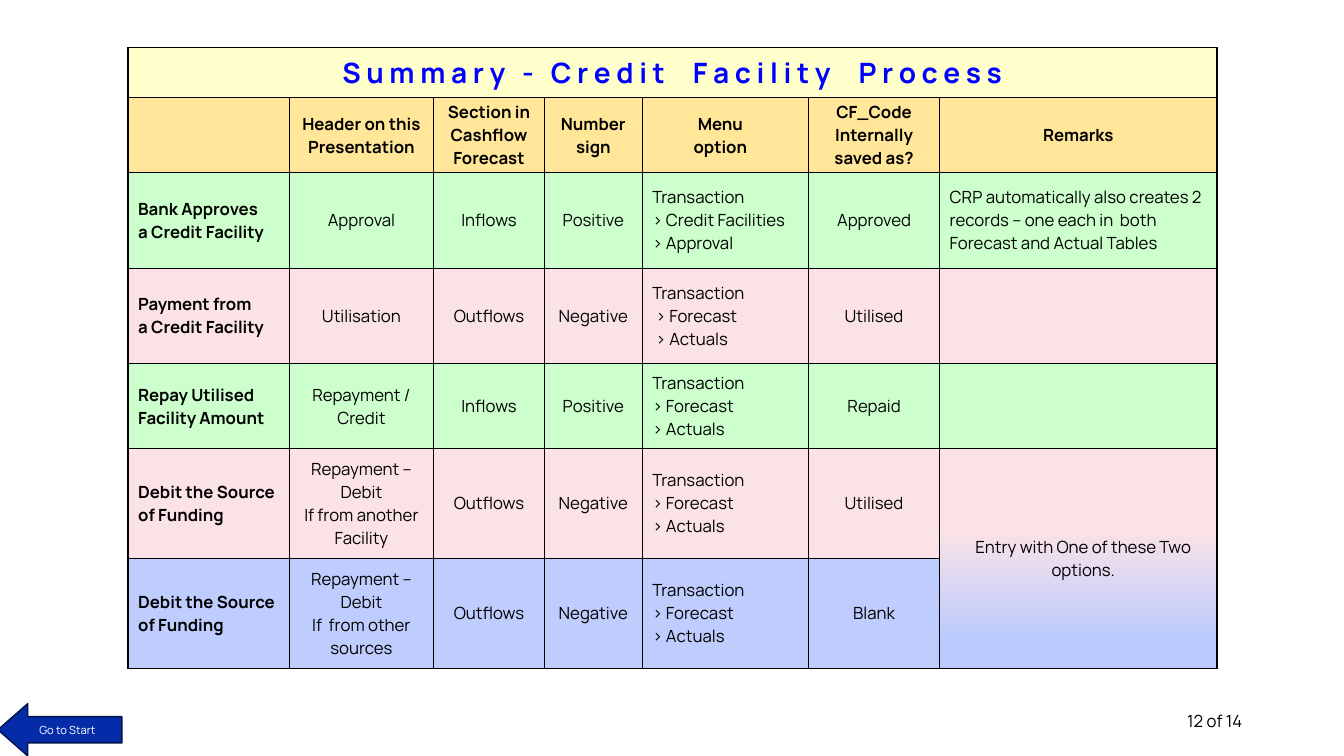
from dataclasses import dataclass

from lxml.etree import SubElement
from pptx import Presentation
from pptx.dml.color import RGBColor
from pptx.enum.shapes import MSO_SHAPE
from pptx.enum.text import MSO_ANCHOR, PP_ALIGN
from pptx.oxml.ns import qn
from pptx.slide import Slide
from pptx.table import _Cell
from pptx.text.text import TextFrame
from pptx.util import Emu, Pt

PX = 9144


@dataclass(frozen=True)
class Theme:
    font: str = "Manrope"
    title_size: int = 20
    body_size: int = 12
    button_size: int = 8
    ink: str = "000000"
    title_ink: str = "0000FF"
    title_fill: str = "FFFFCC"
    header_fill: str = "FFE699"
    green: str = "CCFFCC"
    pink: str = "FAE2E6"
    blue: str = "BECDFE"
    blend_end: str = "BACAFE"
    button_fill: str = "042CA9"
    button_line: str = "02134A"
    button_ink: str = "FFFFFF"


@dataclass(frozen=True)
class Box:
    left: int
    top: int
    width: int
    height: int

    def emu(self) -> list[Emu]:
        return [px(side) for side in (self.left, self.top, self.width, self.height)]


@dataclass(frozen=True)
class Style:
    color: str
    size: int
    bold: bool = False
    align: PP_ALIGN = PP_ALIGN.CENTER


@dataclass(frozen=True)
class Step:
    fill: str
    height: int
    texts: tuple[str, ...]


THEME = Theme()
PAGE = Box(0, 0, 1333, 750)
TABLE = Box(127, 47, 1080, 616)
BUTTON = Box(-2, 698, 123, 52)
PAGE_NUMBER = Box(942, 695, 300, 40)
COLUMN_WIDTHS = (160, 143, 110, 97, 165, 130, 275)
TITLE_HEIGHT = 50
STEP_COLUMN, MENU_COLUMN, REMARKS_COLUMN = 0, 4, 6
LEFT_COLUMNS = (STEP_COLUMN, MENU_COLUMN, REMARKS_COLUMN)
INDENT = 10
TITLE = " ".join("Summary - Credit  Facility  Process")
MENU = "Transaction\n> Forecast\n> Actuals"

HEADER = Step(THEME.header_fill, 74, (
    "", "Header on this Presentation", "Section in Cashflow\nForecast", "Number\nsign",
    "Menu\noption", "CF_Code\nInternally\nsaved as?", "Remarks"))
STEPS = (
    Step(THEME.green, 95, (
        "Bank Approves\na Credit Facility", "Approval", "Inflows", "Positive",
        "Transaction\n> Credit Facilities\n> Approval", "Approved",
        "CRP automatically also creates 2 records – one each in  both Forecast and Actual Tables")),
    Step(THEME.pink, 95, (
        "Payment from\na Credit Facility", "Utilisation", "Outflows", "Negative",
        "Transaction\n > Forecast\n > Actuals", "Utilised", "")),
    Step(THEME.green, 84, (
        "Repay Utilised Facility Amount", "Repayment / Credit", "Inflows", "Positive",
        MENU, "Repaid", "")),
    Step(THEME.pink, 109, (
        "Debit the Source of Funding", "Repayment – Debit\nIf from another Facility",
        "Outflows", "Negative", MENU, "Utilised", "Entry with One of these Two options.")),
    Step(THEME.blue, 109, (
        "Debit the Source of Funding", "Repayment – Debit\nIf  from other sources",
        "Outflows", "Negative", MENU, "Blank", "")),
)


def px(length: int) -> Emu:
    return Emu(length * PX)


def rgb(color: str) -> RGBColor:
    return RGBColor.from_string(color)


def write(frame: TextFrame, text: str, style: Style) -> None:
    frame.text = text
    formats = {"name": THEME.font, "size": Pt(style.size), "bold": style.bold}
    for para in frame.paragraphs:
        para.alignment = style.align
        for span in para.runs:
            for name, value in formats.items():
                setattr(span.font, name, value)
            span.font.color.rgb = rgb(style.color)


def add_borders(cell: _Cell) -> None:
    properties = cell._tc.get_or_add_tcPr()
    for side in ("a:lnL", "a:lnR", "a:lnT", "a:lnB"):
        line = SubElement(properties, qn(side), w=str(Pt(1)))
        SubElement(SubElement(line, qn("a:solidFill")), qn("a:srgbClr"), val=THEME.ink)


def fill_cell(cell: _Cell, text: str, fill: str, style: Style, left: int = 0, right: int = 0) -> None:
    formats = {
        "margin_left": px(left), "margin_right": px(right), "margin_top": 0,
        "margin_bottom": 0, "vertical_anchor": MSO_ANCHOR.MIDDLE,
    }
    for name, value in formats.items():
        setattr(cell, name, value)
    add_borders(cell)
    cell.fill.solid()
    cell.fill.fore_color.rgb = rgb(fill)
    write(cell.text_frame, text, style)


def blend_cell(cell: _Cell) -> None:
    cell.fill.gradient()
    cell.fill.gradient_angle = 270
    stops = ((0.37, THEME.pink), (0.88, THEME.blend_end))
    for stop, (position, color) in zip(cell.fill.gradient_stops, stops):
        stop.position = position
        stop.color.rgb = rgb(color)


def add_summary(page: Slide) -> None:
    rows = len(STEPS) + 2
    table = page.shapes.add_table(rows, len(COLUMN_WIDTHS), *TABLE.emu()).table
    table.first_row = table.horz_banding = False
    for column, width in zip(table.columns, COLUMN_WIDTHS):
        column.width = px(width)
    heights = (TITLE_HEIGHT, HEADER.height, *(step.height for step in STEPS))
    for row, height in zip(table.rows, heights):
        row.height = px(height)

    title_style = Style(THEME.title_ink, THEME.title_size, True)
    header_style = Style(THEME.ink, THEME.body_size, True)
    for index, text in enumerate(HEADER.texts):
        fill_cell(table.cell(0, index), TITLE if index == 0 else "", THEME.title_fill, title_style)
        right = INDENT if index == MENU_COLUMN else 0
        fill_cell(table.cell(1, index), text, HEADER.fill, header_style, right=right)
    for row, step in enumerate(STEPS, start=2):
        for index, text in enumerate(step.texts):
            indented = index in LEFT_COLUMNS
            merged = index == REMARKS_COLUMN and row >= rows - 2
            align = PP_ALIGN.LEFT if indented and not merged else PP_ALIGN.CENTER
            style = Style(THEME.ink, THEME.body_size, index == STEP_COLUMN, align)
            fill_cell(table.cell(row, index), text, step.fill, style, left=INDENT * indented)

    table.cell(0, 0).merge(table.cell(0, REMARKS_COLUMN))
    options = table.cell(rows - 2, REMARKS_COLUMN)
    options.merge(table.cell(rows - 1, REMARKS_COLUMN))
    blend_cell(options)


def add_start_button(page: Slide) -> None:
    arrow = page.shapes.add_shape(MSO_SHAPE.LEFT_ARROW, *BUTTON.emu())
    arrow.adjustments[0] = 0.5
    arrow.adjustments[1] = 0.57
    arrow.shadow.inherit = False
    arrow.fill.solid()
    arrow.fill.fore_color.rgb = rgb(THEME.button_fill)
    arrow.line.color.rgb = rgb(THEME.button_line)
    arrow.line.width = Pt(1)
    arrow.text_frame.vertical_anchor = MSO_ANCHOR.MIDDLE
    write(arrow.text_frame, "Go to Start", Style(THEME.button_ink, THEME.button_size))


def add_page_number(page: Slide) -> None:
    frame = page.shapes.add_textbox(*PAGE_NUMBER.emu()).text_frame
    frame.word_wrap = True
    frame.vertical_anchor = MSO_ANCHOR.MIDDLE
    write(frame, "12 of 14", Style(THEME.ink, THEME.body_size, align=PP_ALIGN.RIGHT))


def main() -> None:
    deck = Presentation()
    deck.slide_width, deck.slide_height = px(PAGE.width), px(PAGE.height)
    page = deck.slides.add_slide(deck.slide_layouts[6])
    add_summary(page)
    add_start_button(page)
    add_page_number(page)
    deck.save("out.pptx")


if __name__ == "__main__":
    main()
